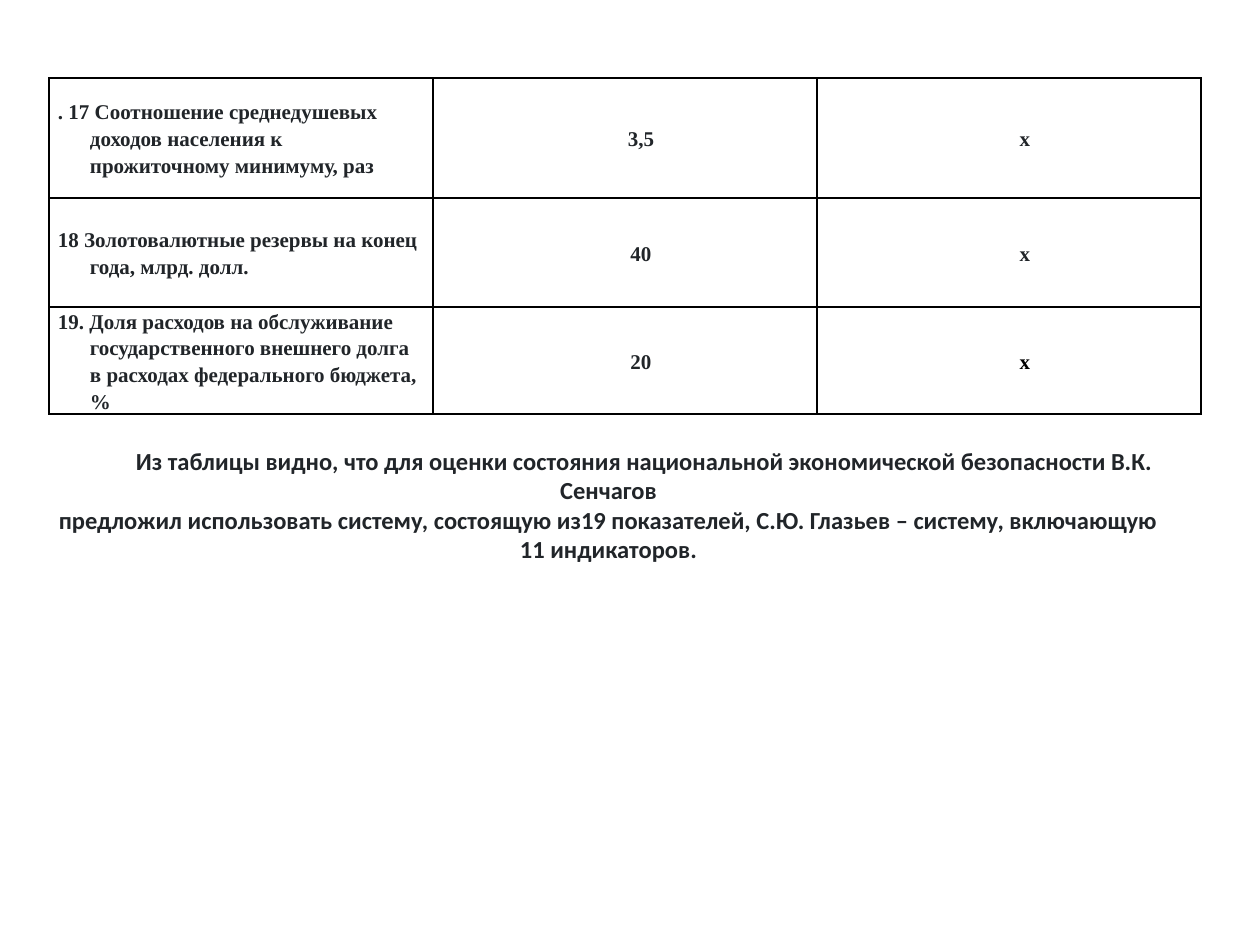
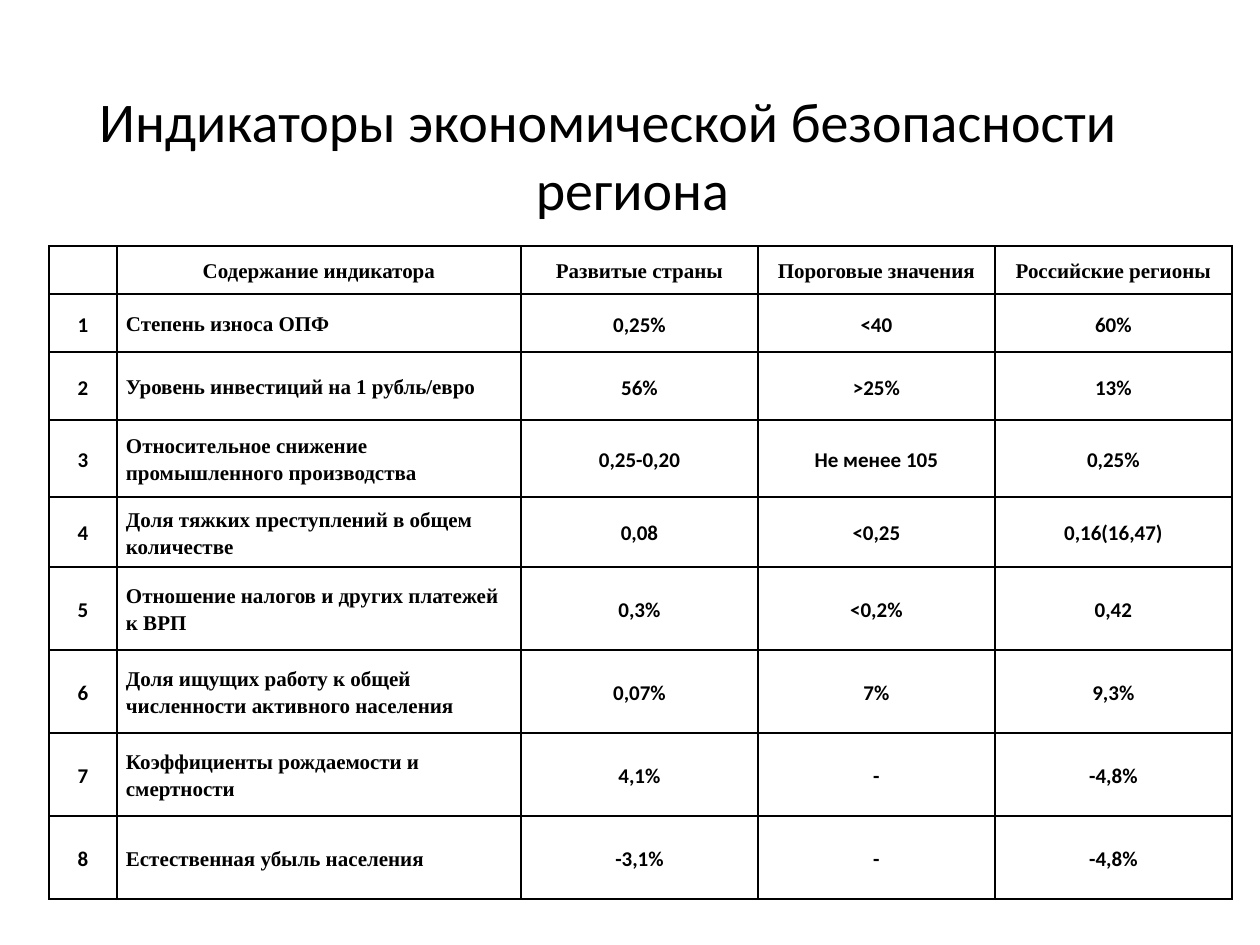
"""Build two slides with tables of economic security indicators."""
from dataclasses import dataclass
from typing import Callable

from lxml import etree
from pptx import Presentation
from pptx.dml.color import RGBColor
from pptx.enum.text import MSO_ANCHOR, PP_ALIGN
from pptx.oxml.ns import qn
from pptx.slide import Slide
from pptx.text.text import TextFrame
from pptx.util import Pt

LEFT, MID = PP_ALIGN.LEFT, PP_ALIGN.CENTER
CELL_MID = MSO_ANCHOR.MIDDLE
SCALE = 914400 / 126
SANS, SERIF = "Calibri", "Times New Roman"
COLORS = {"ink": "212529", "black": "000000"}
EDGES = ("a:lnL", "a:lnR", "a:lnT", "a:lnB")
EDGE = 49
HANG = 32

TITLE = "Индикаторы экономической безопасности региона"
NOTE = (
    ("Из таблицы видно, что для оценки состояния национальной "
     "экономической безопасности В.К. Сенчагов", 72),
    ("предложил использовать систему, состоящую из19 показателей, "
     "С.Ю. Глазьев – систему, включающую", 0),
    ("11 индикаторов.", 0),
)
LIMITS = [
    (". 17 Соотношение среднедушевых доходов населения к "
     "прожиточному минимуму, раз", "3,5", "х"),
    ("18 Золотовалютные резервы на конец года, млрд. долл.", "40", "х"),
    ("19. Доля расходов на обслуживание государственного внешнего "
     "долга в расходах федерального бюджета, %", "20", "х"),
]
HEAD = ("", "Содержание индикатора", "Развитые страны",
        "Пороговые значения", "Российские регионы")
REGION = [
    ("Степень износа ОПФ", "0,25%", "<40", "60%"),
    ("Уровень инвестиций на 1 рубль/евро", "56%", ">25%", "13%"),
    ("Относительное снижение промышленного производства",
     "0,25-0,20", "Не менее 105", "0,25%"),
    ("Доля тяжких преступлений в общем количестве",
     "0,08", "<0,25", "0,16(16,47)"),
    ("Отношение налогов и других платежей к ВРП", "0,3%", "<0,2%", "0,42"),
    ("Доля ищущих работу к общей численности активного населения",
     "0,07%", "7%", "9,3%"),
    ("Коэффициенты рождаемости и смертности", "4,1%", "-", "-4,8%"),
    ("Естественная убыль населения", "-3,1%", "-", "-4,8%"),
]


@dataclass(frozen=True)
class Grid:
    """Place, sizes, text and format rule of a table."""
    top: int
    cols: list[int]
    rows: list[int]
    cells: list[tuple[str, ...]]
    look: Callable[[int, int], dict]


def px(size: int) -> int:
    """Turn px into EMU."""
    return round(size * SCALE)


def put(frame: TextFrame, text: str, *, size: int = 12, font: str = SANS,
        color: str = "black", bold: bool = True, align: PP_ALIGN = MID,
        left: int = 0, first: int = 0, space: float = 1.0,
        more: bool = False) -> None:
    """Write one paragraph with its format."""
    para = frame.add_paragraph() if more else frame.paragraphs[0]
    para.alignment, para.line_spacing = align, space
    props = para._p.get_or_add_pPr()
    props.set("marL", str(px(left)))
    props.set("indent", str(px(first)))
    para.font.size = Pt(size)
    if text:
        run = para.add_run()
        run.text = text
        run.font.size, run.font.name, run.font.bold = Pt(size), font, bold
        run.font.color.rgb = RGBColor.from_string(COLORS[color])


def pad(item, side: int, top: int) -> None:
    """Set the inner margins of a cell or text frame."""
    item.margin_left = item.margin_right = px(side)
    item.margin_top, item.margin_bottom = px(top), 0


def add_box(slide: Slide, place: tuple[int, int, int, int],
            side: int, top: int) -> TextFrame:
    """Add a wrapping text box."""
    frame = slide.shapes.add_textbox(*map(px, place)).text_frame
    frame.word_wrap = True
    pad(frame, side, top)
    return frame


def add_edges(cell) -> None:
    """Draw thin black borders round a cell."""
    props = cell._tc.get_or_add_tcPr()
    for spot, tag in enumerate(EDGES):
        line = etree.Element(qn(tag), w=str(Pt(1)))
        fill = etree.SubElement(line, qn("a:solidFill"))
        etree.SubElement(fill, qn("a:srgbClr"), val=COLORS["black"])
        props.insert(spot, line)


def add_grid(slide: Slide, grid: Grid) -> None:
    """Add a table and fill its cells."""
    place = (EDGE, grid.top, sum(grid.cols), sum(grid.rows))
    table = slide.shapes.add_table(
        len(grid.rows), len(grid.cols), *map(px, place)).table
    table.first_row = table.horz_banding = False
    for col, width in zip(table.columns, grid.cols):
        col.width = px(width)
    for r, (row, height) in enumerate(zip(table.rows, grid.rows)):
        row.height = px(height)
        for c, text in enumerate(grid.cells[r]):
            cell = table.cell(r, c)
            cell.vertical_anchor = CELL_MID
            pad(cell, 9, 0)
            cell.fill.background()
            add_edges(cell)
            put(cell.text_frame, text, space=1.15, **grid.look(r, c))


def limit_look(r: int, c: int) -> dict:
    """Give the format of a cell in the table of limits."""
    return {"font": SERIF, "align": MID if c else LEFT,
            "left": 2 * HANG if c else HANG, "first": -HANG,
            "color": "black" if (r, c) == (2, 2) else "ink"}


def region_look(r: int, c: int) -> dict:
    """Give the format of a cell in the table of regions."""
    return {"font": SERIF if r == 0 or c == 1 else SANS,
            "align": LEFT if r and c == 1 else MID}


def main() -> None:
    """Build and save the slides."""
    deck = Presentation()
    deck.slide_width, deck.slide_height = px(1260), px(945)
    blank = deck.slide_layouts[6]

    slide = deck.slides.add_slide(blank)
    add_grid(slide, Grid(78, [384] * 3, [120, 109, 107], LIMITS, limit_look))
    frame = add_box(slide, (0, 440, 1217, 152), 25, 6)
    for n, (text, first) in enumerate(NOTE):
        put(frame, text, size=14, color="ink", first=first, more=n > 0)

    slide = deck.slides.add_slide(blank)
    frame = add_box(slide, (20, 0, 1177, 844), 12, 87)
    put(frame, TITLE, size=32, bold=False, left=48, first=-48)
    cells = [HEAD] + [(str(n), *row) for n, row in enumerate(REGION, 1)]
    add_grid(slide, Grid(246, [68, 404] + [237] * 3,
                         [48, 58, 68, 77, 70] + [83] * 4, cells, region_look))

    deck.save("out.pptx")


if __name__ == "__main__":
    main()
